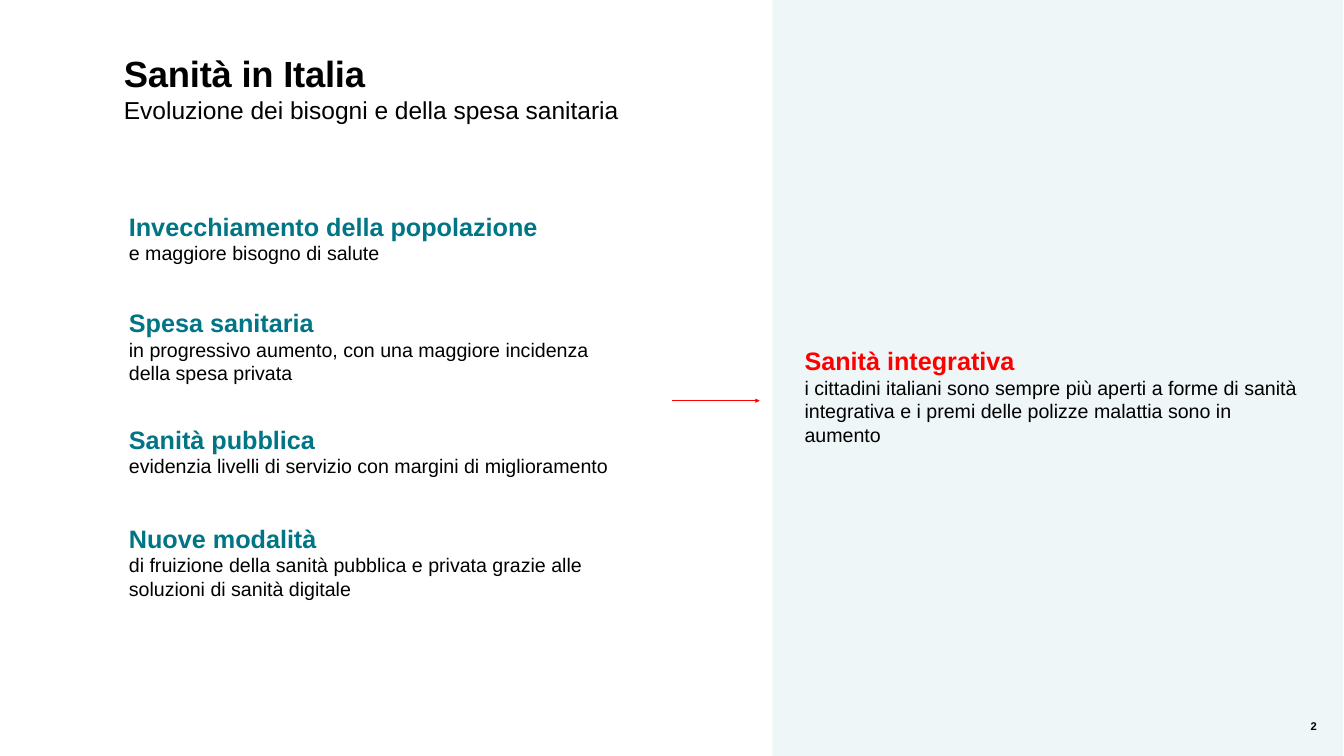
from lxml import etree
from pptx import Presentation
from pptx import util as u
from pptx.dml.color import RGBColor
from pptx.enum import shapes, text
from pptx.oxml import ns

FONT = "Arial"
COLORS = {
    "panel": "EEF6F7",
    "teal": "007585",
    "red": "FF0000",
    "black": "000000",
}
TOPICS = [
    (298, 85, "Invecchiamento della popolazione", "e maggiore bisogno di salute"),
    (435.6, 119, "Spesa sanitaria",
     "in progressivo aumento, con una maggiore incidenza della spesa privata"),
    (602, 85, "Sanità pubblica",
     "evidenzia livelli di servizio con margini di miglioramento"),
    (743.8, 119, "Nuove modalità",
     "di fruizione della sanità pubblica e privata grazie alle soluzioni di sanità digitale"),
]
LEFT = 177
TOPIC_WIDTH = 726.5


def rgb(name):
    return RGBColor.from_string(COLORS[name])


def add_panel(s, x, y, w, h, color):
    sp = s.shapes.add_shape(shapes.MSO_SHAPE.RECTANGLE, u.Pt(x), u.Pt(y), u.Pt(w), u.Pt(h))
    sp.shadow.inherit = False
    sp.fill.solid()
    sp.fill.fore_color.rgb = rgb(color)
    sp.line.fill.background()


def add_box(s, x, y, w, h, inset=True):
    tf = s.shapes.add_textbox(u.Pt(x), u.Pt(y), u.Pt(w), u.Pt(h)).text_frame
    tf.word_wrap = True
    if not inset:
        tf.margin_left = tf.margin_right = tf.margin_top = tf.margin_bottom = 0
    return tf.paragraphs[0]


def add_run(p, content, size, color="black", bold=False):
    r = p.add_run()
    r.text = content
    r.font.name = FONT
    r.font.size = u.Pt(size)
    r.font.bold = bold
    r.font.color.rgb = rgb(color)
    return r


def add_topic(s, x, y, h, heading, body, color="teal"):
    p = add_box(s, x, y, TOPIC_WIDTH, h)
    add_run(p, heading, 36, color, True)
    p.add_line_break()
    add_run(p, body, 28)


def add_arrow(s, x1, x2, y, color):
    line = s.shapes.add_connector(
        shapes.MSO_CONNECTOR.STRAIGHT, u.Pt(x1), u.Pt(y), u.Pt(x2), u.Pt(y))
    line.line.color.rgb = rgb(color)
    line.line.width = u.Pt(2)
    etree.SubElement(line.line._get_or_add_ln(), ns.qn("a:tailEnd"), type="triangle")
    etree.SubElement(line._element.spPr, ns.qn("a:effectLst"))


def main():
    prs = Presentation()
    prs.slide_width = u.Pt(1919.5)
    prs.slide_height = u.Pt(1080)
    s = prs.slides.add_slide(prs.slide_layouts[6])

    add_panel(s, 1103, 0, 815, 1080, "panel")

    title = add_run(add_box(s, LEFT, 73.4, 908, 63, inset=False),
                    "Sanità in Italia", 52, bold=True)
    title._r.get_or_add_rPr().set("spc", "-30")
    add_run(add_box(s, LEFT, 136, 1682.6, 44, inset=False),
            "Evoluzione dei bisogni e della spesa sanitaria", 35)

    for y, h, heading, body in TOPICS:
        add_topic(s, LEFT, y, h, heading, body)
    add_arrow(s, 960, 1085, 572.4, "red")
    add_topic(s, 1142, 489.6, 196.6, "Sanità integrativa",
              "i cittadini italiani sono sempre più aperti a forme di sanità integrativa "
              "e i premi delle polizze malattia sono in aumento", "red")

    p = add_box(s, 1824.5, 1024, 63.4, 56)
    p.alignment = text.PP_ALIGN.RIGHT
    add_run(p, "2", 16, bold=True)

    prs.save("out.pptx")


if __name__ == "__main__":
    main()
